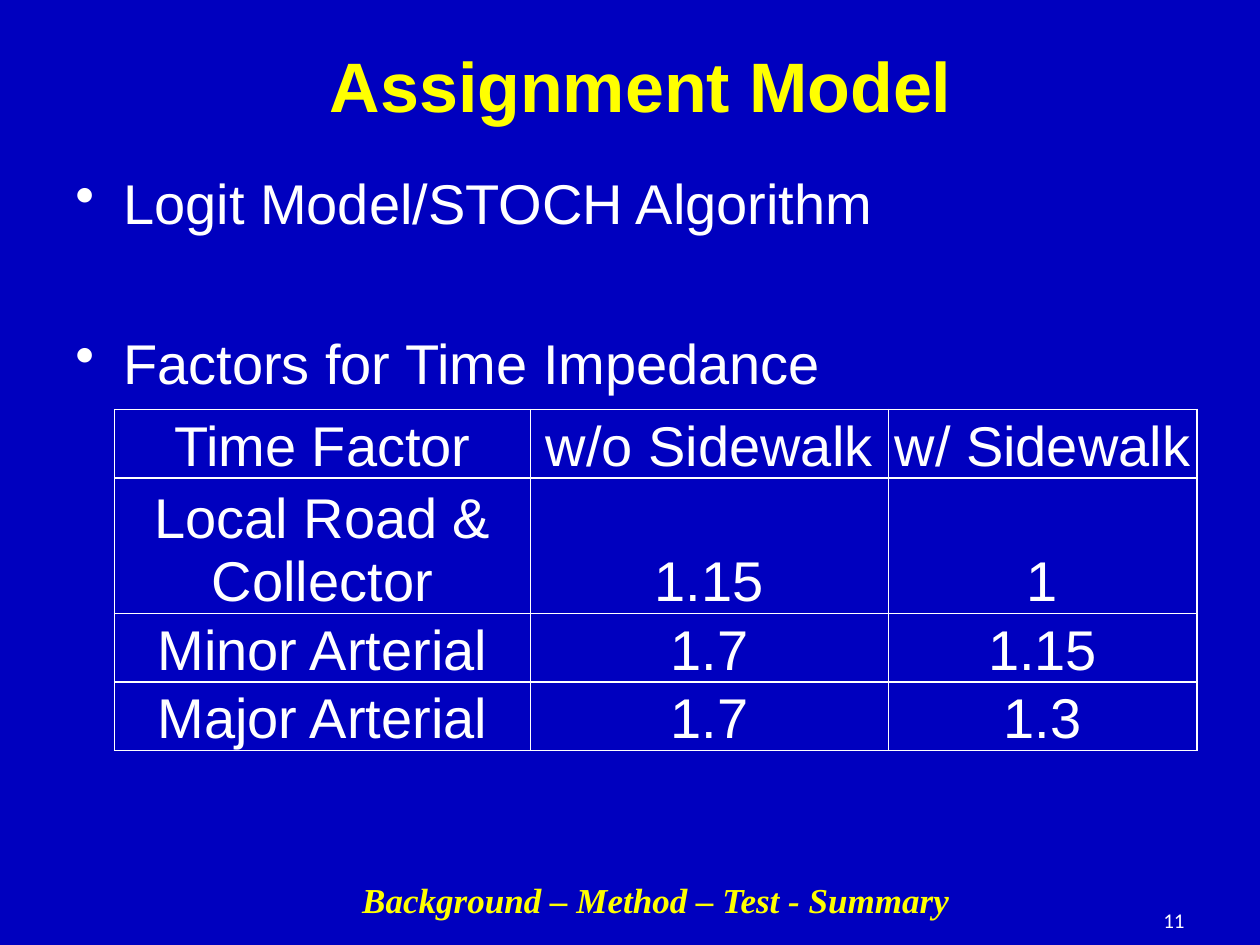
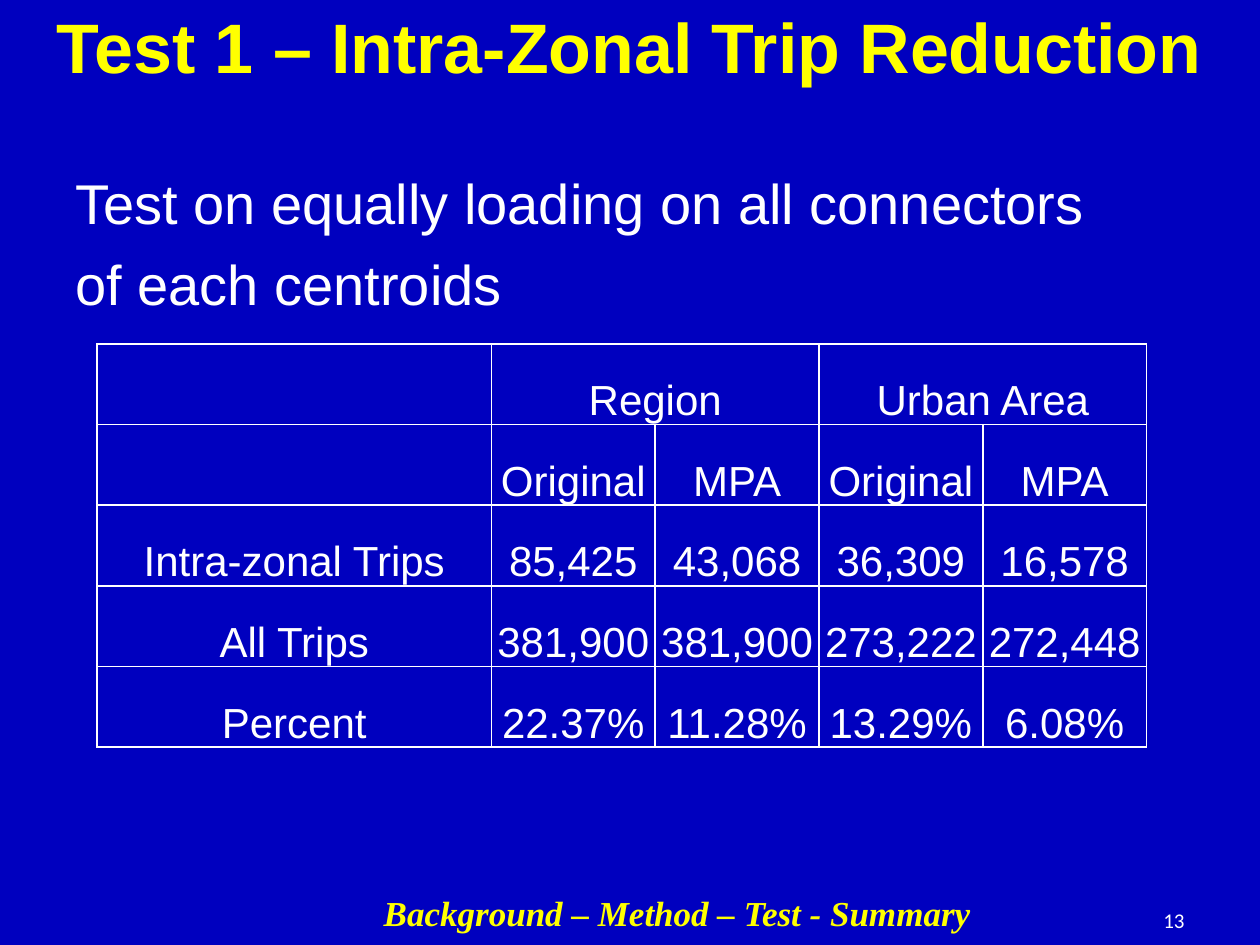
from dataclasses import dataclass

from lxml import etree
from pptx import Presentation
from pptx.dml.color import RGBColor
from pptx.enum.text import MSO_ANCHOR, PP_ALIGN
from pptx.oxml.ns import qn
from pptx.slide import Slide
from pptx.table import _Cell
from pptx.util import Inches, Pt

LEFT, CENTER, RIGHT = PP_ALIGN.LEFT, PP_ALIGN.CENTER, PP_ALIGN.RIGHT
TOP, MIDDLE, BOTTOM = MSO_ANCHOR.TOP, MSO_ANCHOR.MIDDLE, MSO_ANCHOR.BOTTOM


@dataclass(frozen=True)
class TextStyle:
    font: str
    size: int
    color: str
    bold: bool = False
    italic: bool = False


@dataclass(frozen=True)
class Theme:
    background: str = "0000BF"
    border: str = "FFFFFF"
    border_width: int = 1
    title: TextStyle = TextStyle("Arial", 40, "FFFF00", bold=True)
    body: TextStyle = TextStyle("Arial", 32, "FFFFFF")
    small_body: TextStyle = TextStyle("Arial", 24, "FFFFFF")
    number: TextStyle = TextStyle("Calibri", 12, "FFFFFF")
    trail: TextStyle = TextStyle("Times New Roman", 20, "FFFF00", bold=True, italic=True)


THEME = Theme()
TRAIL = "Background – Method – Test - Summary"
HANGING = Inches(0.38)


@dataclass(frozen=True)
class Box:
    left: float
    top: float
    width: float
    height: float


BODY_BOX = Box(0.5, 1.25, 9, 5.45)
NUMBER_BOX = Box(7.17, 7.1, 2.33, 0.4)


@dataclass(frozen=True)
class Grid:
    left: float
    top: float
    columns: list[float]
    rows: list[float]
    cells: list[list[str]]
    style: TextStyle
    merges: tuple[tuple[int, int, int], ...] = ()  # row, first column, last column


@dataclass(frozen=True)
class Page:
    title: str
    title_box: Box
    title_bottom_inset: float
    lines: list[str]
    line_gap: float
    bullet: str
    number: str
    trail_box: Box
    grid: Grid


PAGES = [
    Page(
        title="Assignment Model",
        title_box=Box(0.5, 0.17, 9.17, 1),
        title_bottom_inset=0.05,
        lines=["Logit Model/STOCH Algorithm", "Factors for Time Impedance"],
        line_gap=53,
        bullet="•",
        number="11",
        trail_box=Box(2.08, 6.88, 6.25, 0.52),
        grid=Grid(
            0.91, 3.25, [3.3, 2.84, 2.45], [0.5, 1.01, 0.5, 0.5],
            [
                ["Time Factor", "w/o Sidewalk", "w/ Sidewalk"],
                ["Local Road & Collector", "1.15", "1"],
                ["Minor Arterial", "1.7", "1.15"],
                ["Major Arterial", "1.7", "1.3"],
            ],
            THEME.body,
        ),
    ),
    Page(
        title="Test 1 – Intra-Zonal Trip Reduction",
        title_box=Box(0.33, 0.17, 9.33, 1),
        title_bottom_inset=0.67,
        lines=["Test on equally loading on all connectors", "of each centroids"],
        line_gap=7.6,
        bullet="",
        number="13",
        trail_box=Box(2.25, 6.98, 6.25, 0.52),
        grid=Grid(
            0.77, 2.73, [3.13] + [1.3] * 4, [0.64] * 5,
            [
                ["", "Region", "", "Urban Area", ""],
                ["", "Original", "MPA", "Original", "MPA"],
                ["Intra-zonal Trips", "85,425", "43,068", "36,309", "16,578"],
                ["All Trips", "381,900", "381,900", "273,222", "272,448"],
                ["Percent", "22.37%", "11.28%", "13.29%", "6.08%"],
            ],
            THEME.small_body,
            merges=((0, 1, 2), (0, 3, 4)),
        ),
    ),
]


def apply_style(paragraph, style: TextStyle, align: PP_ALIGN) -> None:
    paragraph.alignment = align
    font = paragraph.font
    font.name, font.size = style.font, Pt(style.size)
    font.bold, font.italic = style.bold, style.italic
    font.color.rgb = RGBColor.from_string(style.color)


def add_text(slide: Slide, box: Box, lines: list[str], style: TextStyle,
             align: PP_ALIGN = CENTER, anchor: MSO_ANCHOR = MIDDLE,
             bullet: str = "", gap: float = 0):
    """Add a text box with one paragraph per line and return its frame."""
    frame = slide.shapes.add_textbox(
        Inches(box.left), Inches(box.top), Inches(box.width), Inches(box.height)
    ).text_frame
    frame.word_wrap = True
    frame.vertical_anchor = anchor
    for index, line in enumerate(lines):
        paragraph = frame.add_paragraph() if index else frame.paragraphs[0]
        paragraph.text = line
        if index:
            paragraph.space_before = Pt(gap)
        if bullet:
            properties = paragraph._p.get_or_add_pPr()
            properties.set("marL", str(HANGING))
            properties.set("indent", str(-HANGING))
            etree.SubElement(properties, qn("a:buChar"), char=bullet)
        apply_style(paragraph, style, align)
    return frame


def add_borders(cell: _Cell) -> None:
    properties = cell._tc.get_or_add_tcPr()
    for side in ("a:lnL", "a:lnR", "a:lnT", "a:lnB"):
        line = etree.SubElement(properties, qn(side), w=str(Pt(THEME.border_width)))
        fill = etree.SubElement(line, qn("a:solidFill"))
        etree.SubElement(fill, qn("a:srgbClr"), val=THEME.border)


def add_grid(slide: Slide, grid: Grid) -> None:
    table = slide.shapes.add_table(
        len(grid.rows), len(grid.columns), Inches(grid.left), Inches(grid.top),
        Inches(sum(grid.columns)), Inches(sum(grid.rows)),
    ).table
    table.first_row = table.horz_banding = False
    for column, width in zip(table.columns, grid.columns):
        column.width = Inches(width)
    for row, height, texts in zip(table.rows, grid.rows, grid.cells):
        row.height = Inches(height)
        for cell, text in zip(row.cells, texts):
            cell.text = text
            cell.vertical_anchor = BOTTOM
            cell.margin_left = cell.margin_right = cell.margin_top = Inches(0.01)
            cell.margin_bottom = 0
            add_borders(cell)
            cell.fill.solid()
            cell.fill.fore_color.rgb = RGBColor.from_string(THEME.background)
            apply_style(cell.text_frame.paragraphs[0], grid.style, CENTER)
    for row, first, last in grid.merges:
        table.cell(row, first).merge(table.cell(row, last))


def add_page(prs, page: Page) -> None:
    slide = prs.slides.add_slide(prs.slide_layouts[6])
    slide.background.fill.solid()
    slide.background.fill.fore_color.rgb = RGBColor.from_string(THEME.background)
    title = add_text(slide, page.title_box, [page.title], THEME.title)
    title.margin_bottom = Inches(page.title_bottom_inset)
    body = add_text(slide, BODY_BOX, page.lines, THEME.body, LEFT, TOP,
                    page.bullet, page.line_gap)
    body.margin_top = Inches(0.09)
    add_text(slide, NUMBER_BOX, [page.number], THEME.number, RIGHT)
    add_grid(slide, page.grid)
    add_text(slide, page.trail_box, [TRAIL], THEME.trail)


def main() -> None:
    prs = Presentation()
    prs.slide_width, prs.slide_height = Inches(10), Inches(7.5)
    for page in PAGES:
        add_page(prs, page)
    prs.save("out.pptx")


if __name__ == "__main__":
    main()
